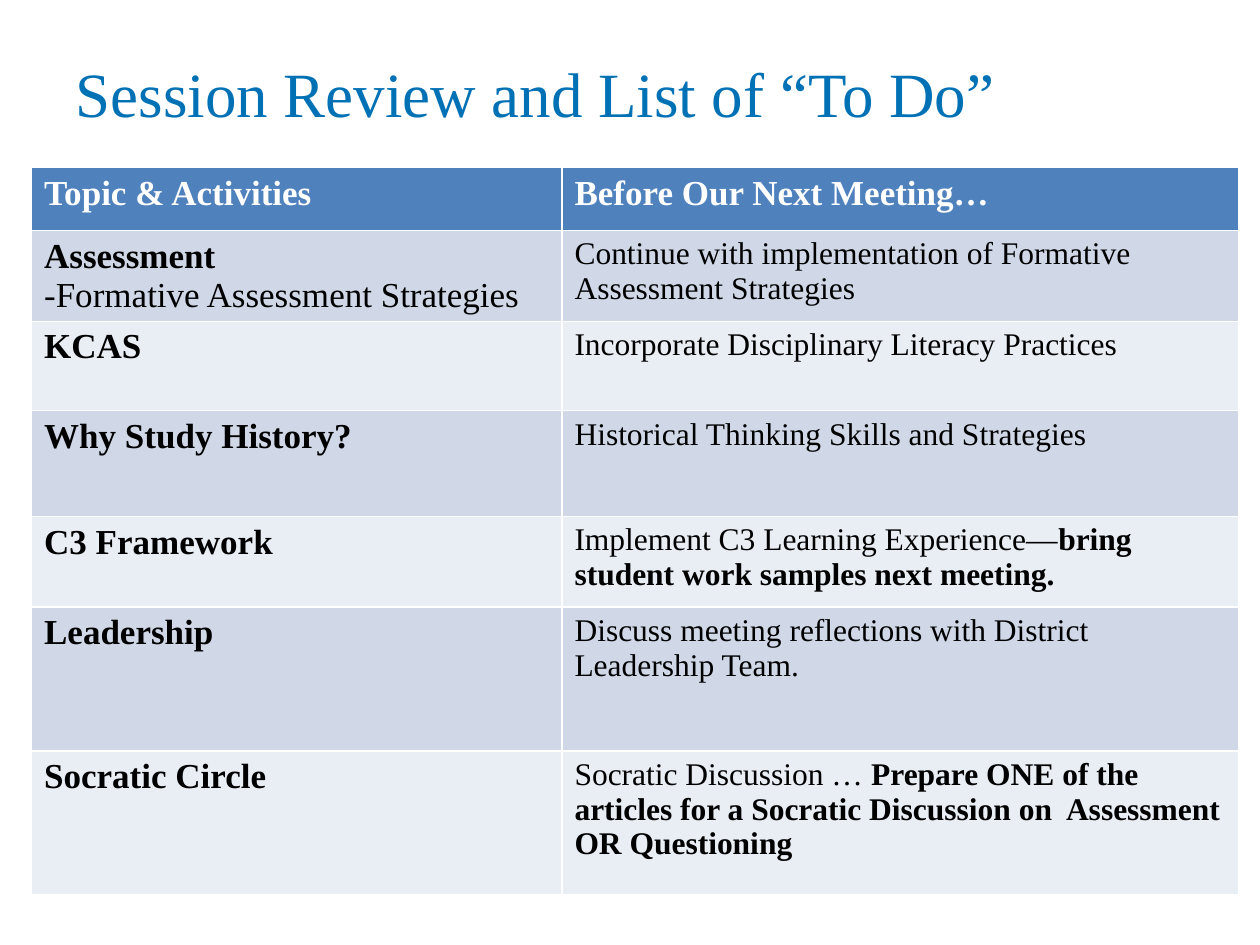
from dataclasses import dataclass

from pptx import Presentation
from pptx.dml.color import RGBColor
from pptx.enum.text import MSO_ANCHOR, PP_ALIGN
from pptx.util import Inches, Pt

LEFT = PP_ALIGN.LEFT
MIDDLE = MSO_ANCHOR.MIDDLE
TITLE_ONLY = 5


@dataclass(frozen=True)
class Theme:
    face: str = "Times New Roman"
    blue: str = "0071B5"
    head: str = "4F81BD"
    bands: tuple = ("D0D8E8", "E9EDF4")
    white: str = "FFFFFF"
    black: str = "000000"
    title: int = 36
    topic: int = 20
    task: int = 18


THEME = Theme()
TITLE = "Session Review and List of “To Do”"
HEADS = ("Topic & Activities", "Before Our Next Meeting…")
TOPICS = [
    ("Assessment", "-Formative Assessment Strategies",
     "Continue with implementation of Formative Assessment Strategies", ""),
    ("KCAS", "", "Incorporate Disciplinary Literacy Practices", ""),
    ("Why Study History?", "", "Historical Thinking Skills and Strategies", ""),
    ("C3 Framework", "", "Implement C3 Learning Experience—",
     "bring student work samples next meeting."),
    ("Leadership", "",
     "Discuss meeting reflections with District Leadership Team.", ""),
    ("Socratic Circle", "", "Socratic Discussion … ",
     "Prepare ONE of the articles for a Socratic Discussion on  "
     "Assessment OR Questioning"),
]
COLS = (4.21, 5.37)
ROWS = (0.5, 0.72, 0.71, 0.84, 0.72, 1.14, 1.14)


def add_run(para, text, size, color, bold=False):
    run = para.add_run()
    run.text = text
    look = {"name": THEME.face, "size": Pt(size), "bold": bold}
    for key, value in look.items():
        setattr(run.font, key, value)
    run.font.color.rgb = RGBColor.from_string(color)


def add_title(slide):
    title = slide.shapes.title
    place = {"left": 0.5, "top": 0.3, "width": 9, "height": 0.87}
    for key, value in place.items():
        setattr(title, key, Inches(value))
    frame = title.text_frame
    frame.vertical_anchor = MIDDLE
    para = frame.paragraphs[0]
    para.alignment = LEFT
    add_run(para, TITLE, THEME.title, THEME.blue)


def fill_cell(cell, fill, paras, size, color):
    cell.fill.solid()
    cell.fill.fore_color.rgb = RGBColor.from_string(fill)
    frame = cell.text_frame
    for i, runs in enumerate(paras):
        para = frame.add_paragraph() if i else frame.paragraphs[0]
        for text, bold in runs:
            add_run(para, text, size, color, bold)


def add_grid(slide):
    grid = slide.shapes.add_table(
        len(ROWS), len(COLS), Inches(0.25), Inches(1.33),
        Inches(sum(COLS)), Inches(sum(ROWS))).table
    for col, width in zip(grid.columns, COLS):
        col.width = Inches(width)
    for row, height in zip(grid.rows, ROWS):
        row.height = Inches(height)
    for i, text in enumerate(HEADS):
        fill_cell(grid.cell(0, i), THEME.head, [[(text, True)]],
                  THEME.topic, THEME.white)
    for i, (topic, detail, task, stress) in enumerate(TOPICS):
        fill = THEME.bands[i % 2]
        names = [[(topic, True)]]
        if detail:
            names.append([(detail, False)])
        tasks = [(task, False)]
        if stress:
            tasks.append((stress, True))
        fill_cell(grid.cell(i + 1, 0), fill, names, THEME.topic, THEME.black)
        fill_cell(grid.cell(i + 1, 1), fill, [tasks], THEME.task, THEME.black)


def main():
    deck = Presentation()
    deck.slide_width = Inches(10)
    deck.slide_height = Inches(7.5)
    slide = deck.slides.add_slide(deck.slide_layouts[TITLE_ONLY])
    add_title(slide)
    add_grid(slide)
    deck.save("out.pptx")


if __name__ == "__main__":
    main()
